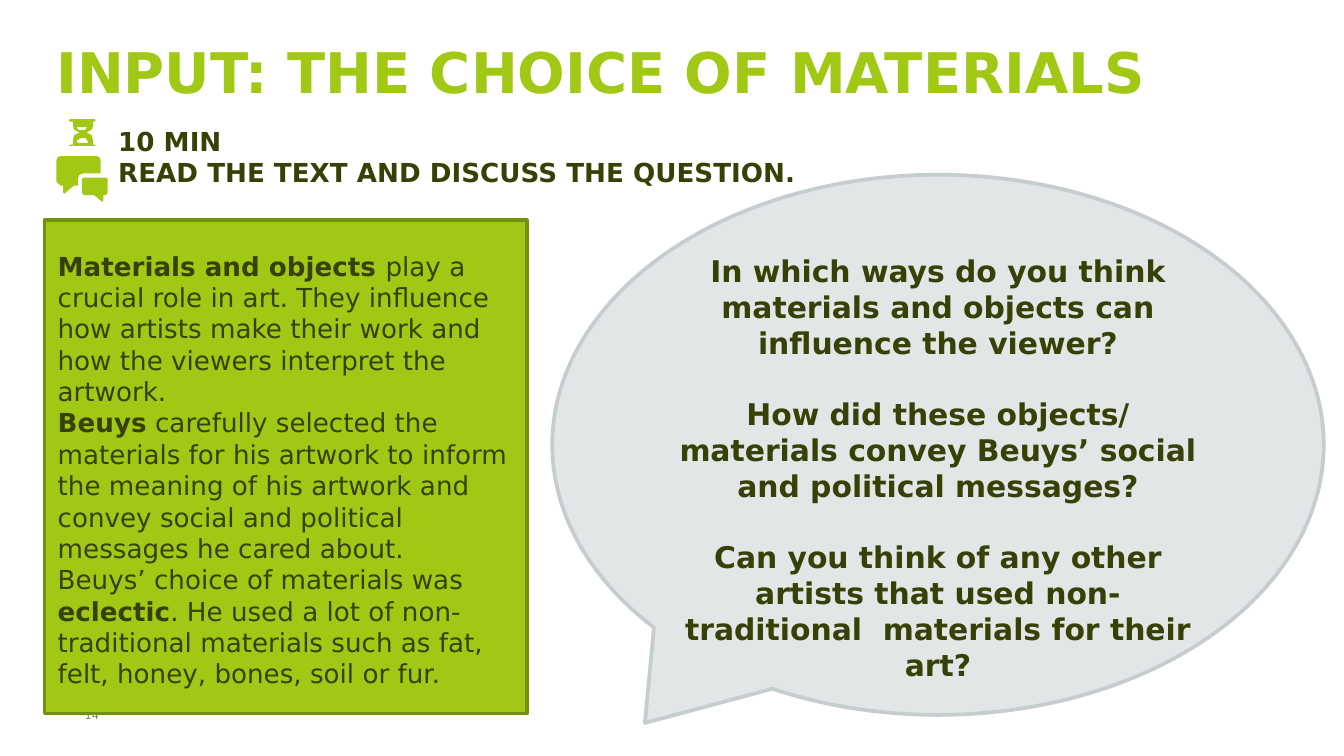
from pptx import Presentation
from pptx.dml.color import RGBColor
from pptx.enum import shapes, text
from pptx.util import Pt

INK = {"lime": "A0C814", "edge": "74910E", "dark": "374105",
       "pale": "E2E6E7", "rim": "C7CDCF", "grey": "788287"}
FACE = "DejaVu Sans"

# Icon outlines on grids 20 and 38 units wide
GLASS = [
    [(19, 19), (18, 19), (18, 16), (17, 12.5), (13, 10), (17, 7.5), (18, 5),
     (18, 2), (19, 2), (20, 1), (19, 0), (1, 0), (0, 1), (1, 2), (3, 2),
     (3, 5), (4, 7.5), (8, 10), (4, 12.5), (3, 16), (3, 19), (1, 19),
     (0, 20), (1, 20.5), (19, 20.5), (20, 20)],
    [(6, 6), (7, 5.5), (13, 5.5), (14.5, 6.5), (12, 8), (9, 8), (7, 7.5)],
    [(6, 16), (9, 13.5), (12, 13.5), (14.5, 16), (13.5, 18), (7, 18),
     (5.5, 17)],
]
CHAT = [
    [(38, 17), (38, 27), (37, 29), (35, 29), (35, 33), (34, 34), (28, 29),
     (20, 29), (19, 27), (19, 17), (20, 16), (37, 16)],
    [(16, 17), (17, 14), (20, 13), (32, 13), (33, 13), (33, 3), (32, 1),
     (30, 0), (3, 0), (1, 1), (0, 3), (0, 19), (1, 20.5), (3, 21.5), (5, 21.5),
     (5, 27), (6, 28), (13, 21.5), (16, 21.5)],
]

HEAD = "INPUT: THE CHOICE OF MATERIALS"
TASK = ["10 MIN", "READ THE TEXT AND DISCUSS THE QUESTION."]
ASKS = [
    "In which ways do you think materials and objects can influence the viewer?",
    "How did these objects/ materials convey Beuys’ social and political messages?",
    "Can you think of any other artists that used non-traditional  materials for their art?",
]
# Each paragraph alternates bold and plain runs
NOTES = [
    ["Materials and objects ", "play a crucial role in art. They influence how "
     "artists make their work and how the viewers interpret the artwork."],
    ["Beuys", " carefully selected the materials for his artwork to inform the "
     "meaning of his artwork and convey social and political messages he cared about."],
    ["", "Beuys’ choice of materials was ", "eclectic", ". He used a lot of "
     "non-traditional materials such as fat, felt, honey, bones, soil or fur."],
]


def rgb(name):
    return RGBColor.from_string(INK[name])


def setup(obj, **vals):
    for key, val in vals.items():
        setattr(obj, key, val)


def paint(shape, fill, line=None):
    shape.shadow.inherit = False
    shape.fill.solid()
    shape.fill.fore_color.rgb = rgb(fill)
    if line:
        shape.line.color.rgb = rgb(line)
        shape.line.width = Pt(2)
    else:
        shape.line.fill.background()


def write(frame, paras, size, color, gap=0, align=text.PP_ALIGN.LEFT):
    for i, parts in enumerate(paras):
        para = frame.add_paragraph() if i else frame.paragraphs[0]
        setup(para, alignment=align, space_before=Pt(gap if i else 0))
        for j, part in enumerate(parts):
            if part:
                run = para.add_run()
                run.text = part
                setup(run.font, name=FACE, size=Pt(size), bold=j % 2 == 0)
                run.font.color.rgb = rgb(color)


def label(slide, box, paras, size, color, **vals):
    frame = slide.shapes.add_textbox(*map(Pt, box)).text_frame
    setup(frame, word_wrap=True, **vals)
    write(frame, paras, size, color)


def icon(slide, left, top, width, grid, rings):
    first, *rest = rings
    pen = slide.shapes.build_freeform(*first[0], scale=Pt(width) / grid)
    pen.add_line_segments(first[1:])
    for ring in rest:
        pen.move_to(*ring[0])
        pen.add_line_segments(ring[1:])
    paint(pen.convert_to_shape(Pt(left), Pt(top)), "lime")


def title(slide, left, top, width, height):
    shape = slide.shapes.title
    setup(shape, left=Pt(left), top=Pt(top), width=Pt(width), height=Pt(height))
    setup(shape.text_frame, word_wrap=True, margin_left=0, margin_right=0,
          margin_top=0, margin_bottom=0, vertical_anchor=text.MSO_ANCHOR.TOP,
          auto_size=text.MSO_AUTO_SIZE.NONE)
    write(shape.text_frame, [[HEAD]], 30, "lime")


def number(slide, *box):
    label(slide, box, [["", "14"]], 6, "grey", margin_left=0, margin_right=0,
          margin_top=0, margin_bottom=0, vertical_anchor=text.MSO_ANCHOR.MIDDLE)


def task(slide, left, top, width, height):
    label(slide, (left + 26, top, width - 26, height),
          [[line] for line in TASK], 14, "dark")
    icon(slide, left + 6.7, top + 0.4, 14.4, 20, GLASS)
    icon(slide, left, top + 20.2, 27.4, 38, CHAT)


def bubble(slide, *box):
    shape = slide.shapes.add_shape(
        shapes.MSO_SHAPE.OVAL_CALLOUT, *map(Pt, box))
    shape.adjustments[0], shape.adjustments[1] = -0.38, 0.515
    paint(shape, "pale", "rim")
    setup(shape.text_frame, word_wrap=True, margin_top=Pt(28),
          vertical_anchor=text.MSO_ANCHOR.MIDDLE)
    write(shape.text_frame, [[ask] for ask in ASKS], 16, "dark", 19,
          text.PP_ALIGN.CENTER)


def panel(slide, left, top, width, height):
    shape = slide.shapes.add_shape(
        shapes.MSO_SHAPE.RECTANGLE, *map(Pt, (left, top, width, height)))
    paint(shape, "lime", "edge")
    label(slide, (left, top + 12.3, width + 6.5, height - 19.4),
          NOTES, 14, "dark")


def main():
    deck = Presentation()
    setup(deck, slide_width=Pt(720), slide_height=Pt(405))
    slide = deck.slides.add_slide(deck.slide_layouts[5])
    number(slide, 45.4, 370.8, 28, 24.5)
    title(slide, 30.2, 20.2, 646.6, 289.4)
    task(slide, 30.2, 63.4, 481, 41)
    bubble(slide, 295.9, 93.6, 413.3, 289.4)
    panel(slide, 23.8, 118.1, 258.5, 264.2)
    deck.save("out.pptx")


if __name__ == "__main__":
    main()
